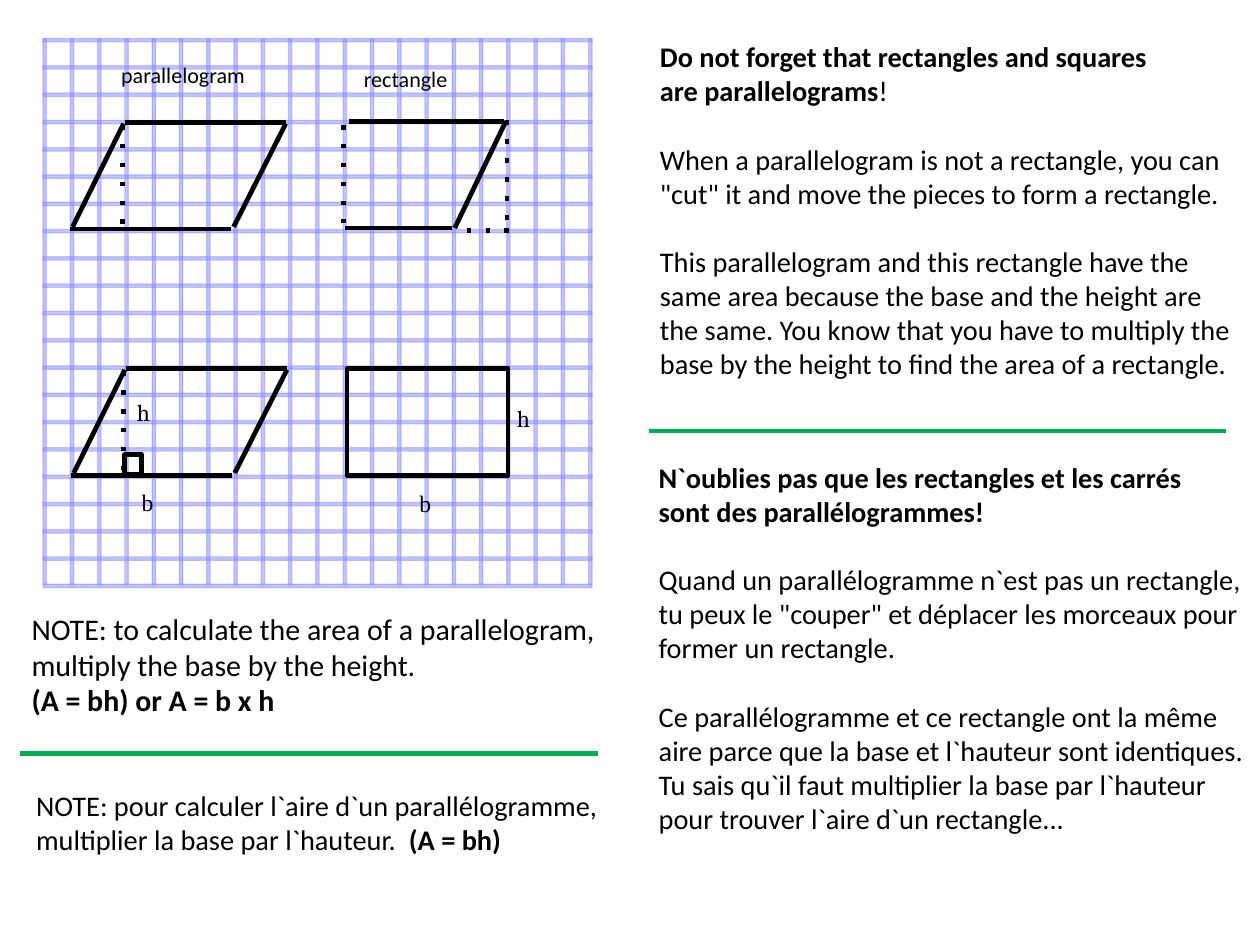
from lxml import etree
from pptx import Presentation
from pptx.dml.color import RGBColor
from pptx.enum.shapes import MSO_CONNECTOR, MSO_SHAPE
from pptx.oxml.ns import qn
from pptx.util import Inches, Pt

STRAIGHT = MSO_CONNECTOR.STRAIGHT
RECTANGLE = MSO_SHAPE.RECTANGLE
COLORS = {"ink": "000000", "grid": "8C8CFF", "divider": "00B050"}
STROKE = 3
LINE_GAP = 21.6  # one blank line of 18 pt text

# Squared paper: left, top, pitch, cells, bar thickness
GRID_LEFT, GRID_TOP, PITCH, CELLS, BAR = 0.38, 0.34, 0.24, 20, 0.03
GRID_END = 5.19
GRID_OPACITY = 51

# Strokes: x1, y1, x2, y2, dotted
PARALLELOGRAM = [
    (1.10, 1.08, 2.52, 1.08, False),
    (2.52, 1.09, 2.06, 2.00, False),
    (0.62, 2.02, 2.04, 2.02, False),
    (1.09, 1.09, 0.64, 2.00, False),
    (1.08, 1.10, 1.08, 1.99, True),
]
PARALLELOGRAM_SHIFTS = [(0, 0), (0.01, 2.17)]
CUT_AND_MOVED = [
    (4.46, 1.07, 4.01, 2.01, False),
    (4.44, 1.07, 3.08, 1.07, False),
    (3.99, 2.01, 3.04, 2.01, False),
    (3.03, 1.10, 3.03, 1.97, True),
    (4.47, 1.06, 4.47, 2.03, True),
    (4.49, 2.03, 4.01, 2.03, True),
]
OUTLINES = [(1.10, 4.01, 0.15, 0.17), (3.06, 3.25, 1.42, 0.94)]  # right angle, rectangle
DIVIDERS = [(5.72, 3.80, 10.81, 3.80), (0.18, 6.64, 5.27, 6.64)]

# Labels: text, box, size, font
LABELS = [
    ("parallelogram", (0.97, 0.49, 1.97, 0.34), 14, "Calibri"),
    ("rectangle", (3.11, 0.53, 1.33, 0.34), 14, "Calibri"),
    ("b", (1.15, 4.25, 0.69, 0.35), 15, "Times New Roman"),
    ("b", (3.60, 4.26, 0.69, 0.35), 15, "Times New Roman"),
    ("h", (4.46, 3.51, 0.67, 0.35), 15, "Cambria"),
    ("h", (1.11, 3.46, 0.67, 0.35), 15, "Cambria"),
]

# Notes: box, size, blocks of paragraphs; a paragraph is a list of (text, bold)
NOTES = [
    ((0.18, 5.33, 9.56, 1.06), 19, [[
        [("NOTE: to calculate the area of a parallelogram,", False)],
        [("multiply the base by the height.", False)],
        [("(A = bh) or A = b x h", True)],
    ]]),
    ((5.72, 0.30, 5.32, 3.13), 18, [
        [[("Do not forget that rectangles and squares", True)],
         [("are parallelograms", True), ("!", False)]],
        [[("When a parallelogram is not a rectangle, you can \"cut\" it and move "
           "the pieces to form a rectangle.", False)]],
        [[("This parallelogram and this rectangle have the same area because the base "
           "and the height are the same. You know that you have to multiply the base "
           "by the height to find the area of a rectangle.", False)]],
    ]),
    ((5.71, 4.01, 5.40, 3.43), 18, [
        [[("N`oublies pas que les rectangles et les carrés", True)],
         [("sont des parallélogrammes!", True)]],
        [[("Quand un parallélogramme n`est pas un rectangle,", False)],
         [("tu peux le \"couper\" et déplacer les morceaux pour", False)],
         [("former un rectangle.", False)]],
        [[("Ce parallélogramme et ce rectangle ont la même", False)],
         [("aire parce que la base et l`hauteur sont identiques.", False)],
         [("Tu sais qu`il faut multiplier la base par l`hauteur", False)],
         [("pour trouver l`aire d`un rectangle...", False)]],
    ]),
    ((0.22, 6.90, 5.63, 0.71), 18, [[
        [("NOTE: pour calculer l`aire d`un parallélogramme,", False)],
        [("multiplier la base par l`hauteur.  ", False), ("(A = bh)", True)],
    ]]),
]


def color(name):
    return RGBColor.from_string(COLORS[name])


def add_stroke(shapes, x1, y1, x2, y2, dotted=False, ink="ink"):
    stroke = shapes.add_connector(STRAIGHT, *map(Inches, (x1, y1, x2, y2)))
    stroke.line.color.rgb = color(ink)
    stroke.line.width = Pt(STROKE)
    properties = stroke._element.spPr
    if dotted:
        etree.SubElement(properties.find(qn("a:ln")), qn("a:prstDash"), val="dot")
    etree.SubElement(properties, qn("a:effectLst"))


def add_bar(shapes, *box):
    bar = shapes.add_shape(RECTANGLE, *map(Inches, box))
    bar.shadow.inherit = False
    bar.fill.solid()
    bar.fill.fore_color.rgb = bar.line.color.rgb = color("grid")
    bar.line.width = 0
    for tint in bar._element.spPr.iter(qn("a:srgbClr")):
        etree.SubElement(tint, qn("a:alpha"), val=str(GRID_OPACITY * 1000))


def add_note(shapes, box, size, blocks, font="Calibri"):
    frame = shapes.add_textbox(*map(Inches, box)).text_frame
    frame.word_wrap = True
    paragraph = frame.paragraphs[0]
    for b, block in enumerate(blocks):
        for i, pieces in enumerate(block):
            if b or i:
                paragraph = frame.add_paragraph()
            if b and not i:
                paragraph.space_before = Pt(LINE_GAP)
            for text, bold in pieces:
                run = paragraph.add_run()
                run.text = text
                for key, value in {"name": font, "size": Pt(size), "bold": bold}.items():
                    setattr(run.font, key, value)
                run.font.color.rgb = color("ink")


prs = Presentation()
prs.slide_width, prs.slide_height = Inches(11.11), Inches(8.33)
shapes = prs.slides.add_slide(prs.slide_layouts[6]).shapes

# Squared paper
paper = shapes.add_group_shape().shapes
span = GRID_END - GRID_LEFT
for i in range(CELLS + 1):
    offset = span * i / CELLS
    add_bar(paper, GRID_LEFT + offset, GRID_TOP, BAR, span)
    add_bar(paper, GRID_LEFT, GRID_TOP + offset, span + BAR, BAR)

# Parallelograms and the cut one
for dx, dy in PARALLELOGRAM_SHIFTS:
    figure = shapes.add_group_shape().shapes
    for x1, y1, x2, y2, dotted in PARALLELOGRAM:
        add_stroke(figure, x1 + dx, y1 + dy, x2 + dx, y2 + dy, dotted)
for stroke in CUT_AND_MOVED:
    add_stroke(shapes, *stroke)

# Right angle mark and rectangle
for box in OUTLINES:
    outline = shapes.add_shape(RECTANGLE, *map(Inches, box))
    outline.shadow.inherit = False
    outline.fill.background()
    outline.line.color.rgb = color("ink")
    outline.line.width = Pt(STROKE)

# Labels, notes and dividers
for text, box, size, font in LABELS:
    add_note(shapes, box, size, [[[(text, False)]]], font)
for note in NOTES:
    add_note(shapes, *note)
for divider in DIVIDERS:
    add_stroke(shapes, *divider, ink="divider")

prs.save("out.pptx")
